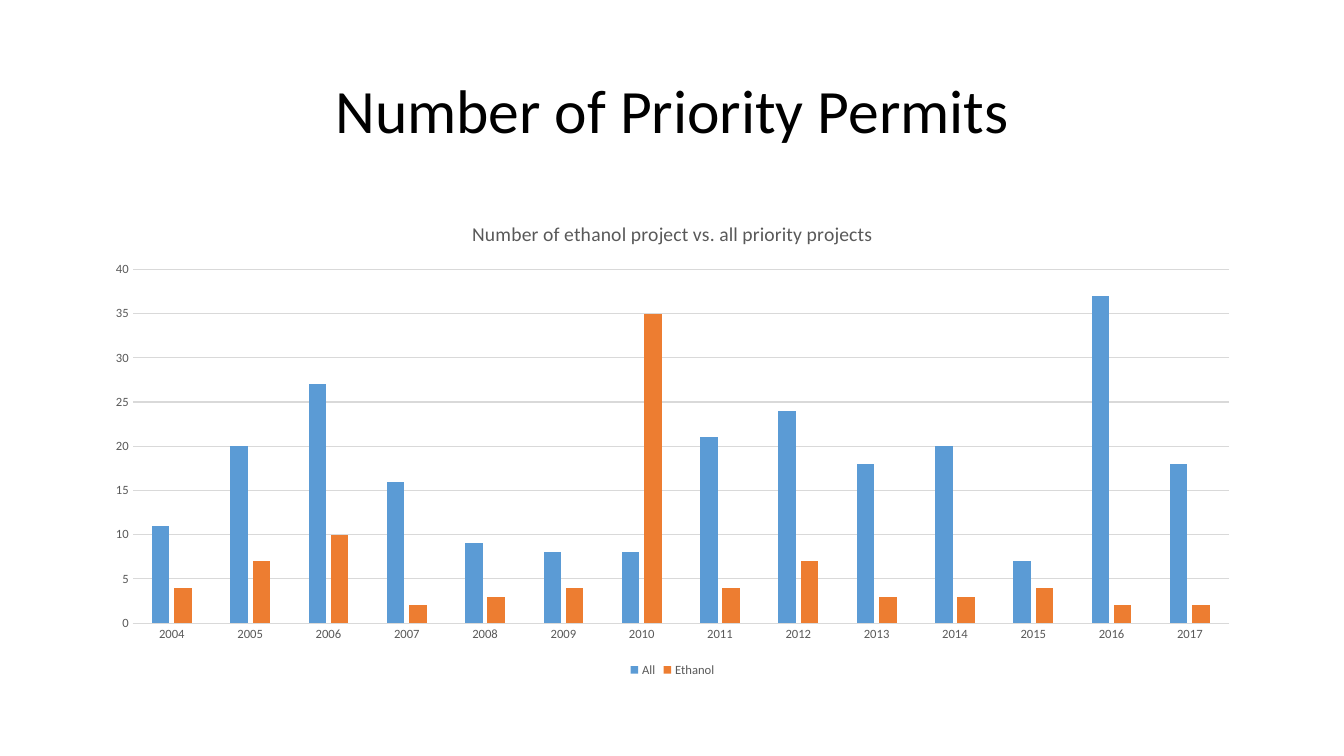
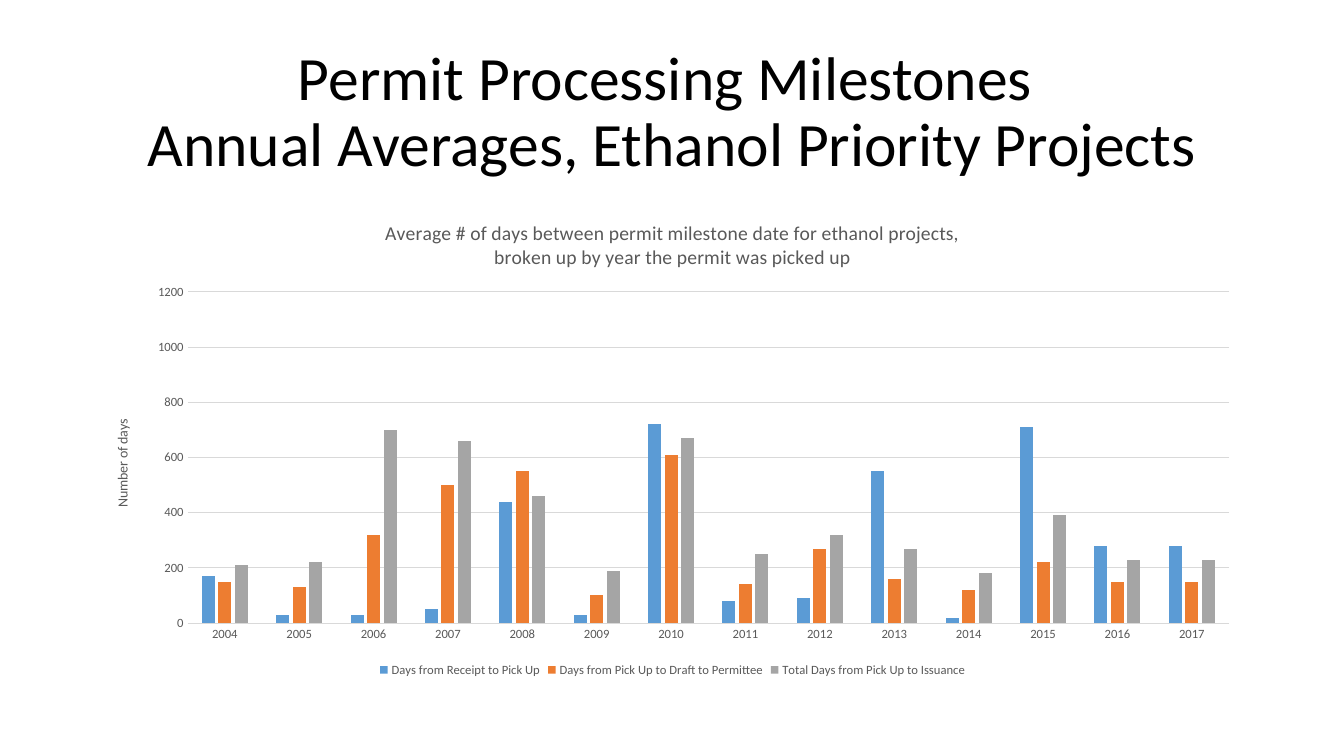
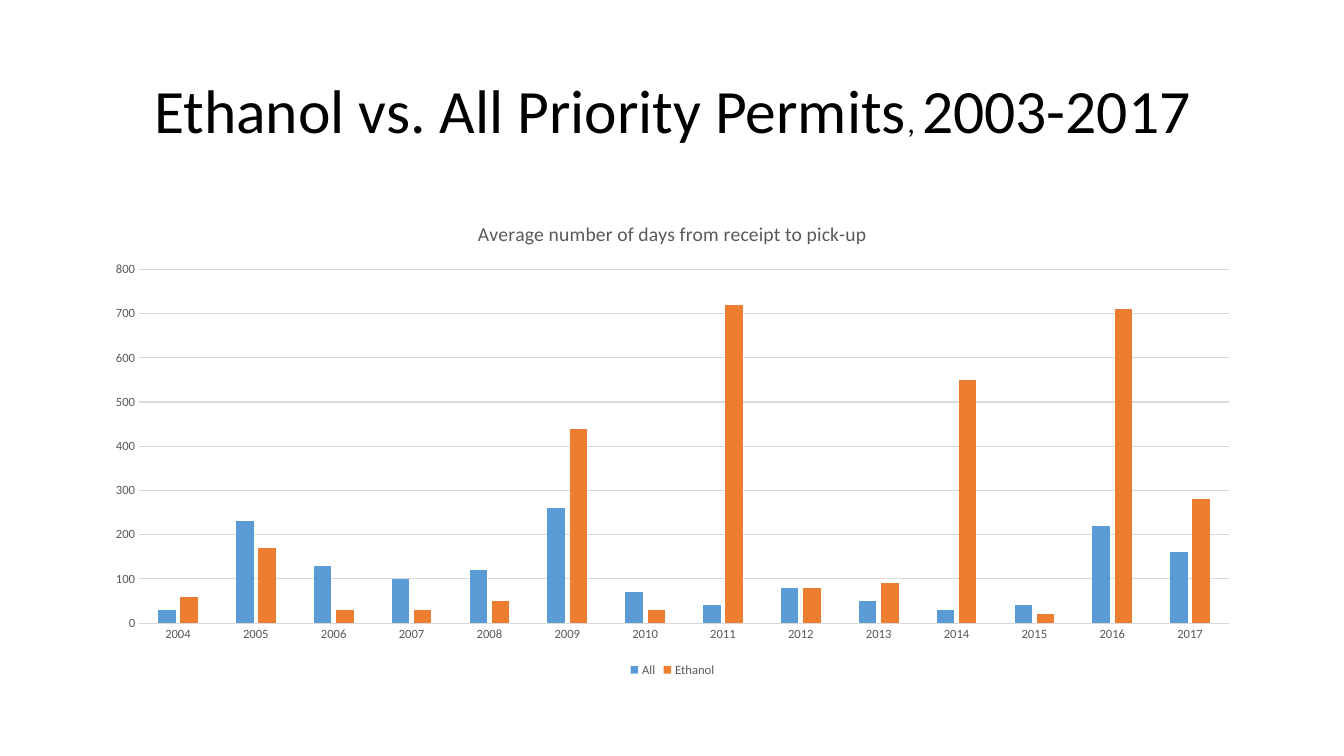
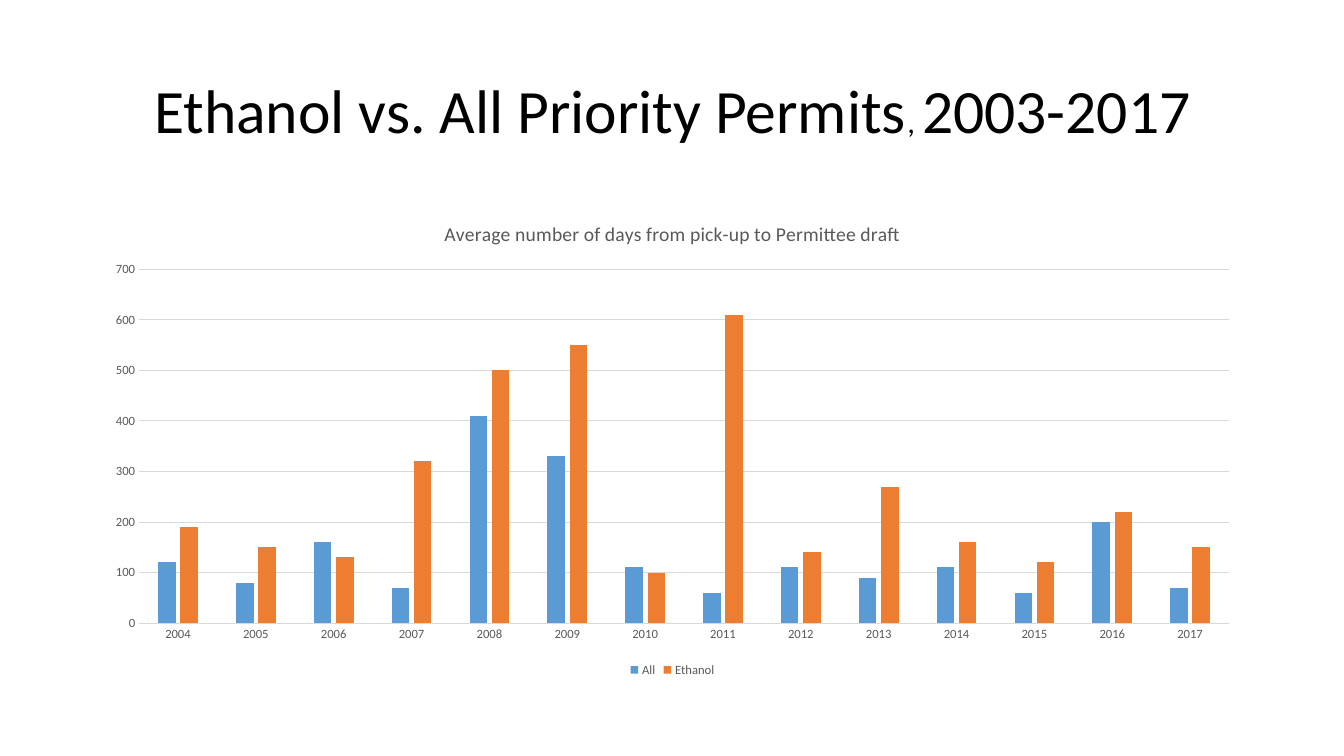
from dataclasses import dataclass

from pptx import Presentation
from pptx.chart.data import CategoryChartData
from pptx.dml.color import RGBColor
from pptx.enum.chart import XL_CHART_TYPE, XL_LEGEND_POSITION, XL_TICK_MARK
from pptx.enum.text import MSO_ANCHOR, MSO_AUTO_SIZE, PP_ALIGN
from pptx.util import Inches, Pt

CLUSTERED = XL_CHART_TYPE.COLUMN_CLUSTERED
LEGEND_BOTTOM = XL_LEGEND_POSITION.BOTTOM
NO_TICK = XL_TICK_MARK.NONE
MIDDLE = MSO_ANCHOR.MIDDLE
NO_AUTOFIT = MSO_AUTO_SIZE.NONE
CENTER = PP_ALIGN.CENTER
TITLE_ONLY = 5


@dataclass(frozen=True)
class Theme:
    font: str = "Calibri"
    black: RGBColor = RGBColor(0x00, 0x00, 0x00)
    gray: RGBColor = RGBColor(0x59, 0x59, 0x59)
    grid: RGBColor = RGBColor(0xD9, 0xD9, 0xD9)
    series: tuple = (
        RGBColor(0x5B, 0x9B, 0xD5),
        RGBColor(0xED, 0x7D, 0x31),
        RGBColor(0xA5, 0xA5, 0xA5),
    )
    title_size: int = 44
    comma_size: int = 22
    chart_title_size: int = 14
    axis_title_size: int = 10
    label_size: int = 9
    line_width: float = 0.75


THEME = Theme()
TITLE_BOX = (0.92, 0.4, 11.5, 1.45)
CHART_BOX = (0.92, 2, 11.5, 4.76)
YEARS = [str(year) for year in range(2004, 2018)]

COMPARISON_TITLE = [
    ("Ethanol vs. All Priority Permits", THEME.title_size),
    (", ", THEME.comma_size),
    ("2003-2017", THEME.title_size),
]

SLIDES = [
    {
        "title": [("Number of Priority Permits", THEME.title_size)],
        "chart_title": "Number of ethanol project vs. all priority projects",
        "series": {
            "All": [11, 20, 27, 16, 9, 8, 8, 21, 24, 18, 20, 7, 37, 18],
            "Ethanol": [4, 7, 10, 2, 3, 4, 35, 4, 7, 3, 3, 4, 2, 2],
        },
        "maximum": 40,
        "step": 5,
    },
    {
        "title": [
            ("Permit Processing Milestones \n", THEME.title_size),
            ("Annual Averages, Ethanol Priority Projects", THEME.title_size),
        ],
        "chart_title": "Average # of days between permit milestone date for ethanol projects,\n"
                       "broken up by year the permit was picked up",
        "series": {
            "Days from Receipt to Pick Up":
                [170, 30, 30, 50, 440, 30, 720, 80, 90, 550, 20, 710, 280, 280],
            "Days from Pick Up to Draft to Permittee":
                [150, 130, 320, 500, 550, 100, 610, 140, 270, 160, 120, 220, 150, 150],
            "Total Days from Pick Up to Issuance":
                [210, 220, 700, 660, 460, 190, 670, 250, 320, 270, 180, 390, 230, 230],
        },
        "maximum": 1200,
        "step": 200,
        "axis_title": "Number of days",
    },
    {
        "title": COMPARISON_TITLE,
        "chart_title": "Average number of days from receipt to pick-up",
        "series": {
            "All": [30, 230, 130, 100, 120, 260, 70, 40, 80, 50, 30, 40, 220, 160],
            "Ethanol": [60, 170, 30, 30, 50, 440, 30, 720, 80, 90, 550, 20, 710, 280],
        },
        "maximum": 800,
        "step": 100,
    },
    {
        "title": COMPARISON_TITLE,
        "chart_title": "Average number of days from pick-up to Permittee draft",
        "series": {
            "All": [120, 80, 160, 70, 410, 330, 110, 60, 110, 90, 110, 60, 200, 70],
            "Ethanol": [190, 150, 130, 320, 500, 550, 100, 610, 140, 270, 160, 120, 220, 150],
        },
        "maximum": 700,
        "step": 100,
    },
]


def style_font(font, size, color=THEME.gray):
    font.name = THEME.font
    font.size = Pt(size)
    font.bold = False
    font.color.rgb = color


def style_line(line):
    line.color.rgb = THEME.grid
    line.width = Pt(THEME.line_width)


def fill_title(page, spans, box):
    """Write (text, size) spans into the title; a final newline breaks the line."""
    title = page.shapes.title
    title.left, title.top, title.width, title.height = map(Inches, box)
    frame = title.text_frame
    frame.vertical_anchor = MIDDLE
    frame.auto_size = NO_AUTOFIT
    para = frame.paragraphs[0]
    para.alignment = CENTER
    para.line_spacing = 0.9
    style_font(para.font, THEME.title_size, THEME.black)
    for text, size in spans:
        span = para.add_run()
        span.text = text.rstrip("\n")
        span.font.size = Pt(size)
        if text.endswith("\n"):
            para.add_line_break()


def write_chart_text(holder, text, size):
    """Give a chart or an axis its title."""
    holder.has_title = True
    frame = getattr(holder, "chart_title", None) or holder.axis_title
    frame = frame.text_frame
    frame.text = text
    for para in frame.paragraphs:
        style_font(para.font, size)


def style_axes(chart, maximum, step):
    years, values = chart.category_axis, chart.value_axis
    for axis in (years, values):
        axis.major_tick_mark = axis.minor_tick_mark = NO_TICK
        style_font(axis.tick_labels.font, THEME.label_size)
    style_line(years.format.line)
    values.format.line.fill.background()
    values.has_major_gridlines = True
    style_line(values.major_gridlines.format.line)
    values.minimum_scale, values.maximum_scale = 0, maximum
    values.major_unit = step


def add_column_chart(page, content, box):
    data = CategoryChartData()
    data.categories = YEARS
    for name, numbers in content["series"].items():
        data.add_series(name, numbers)
    chart = page.shapes.add_chart(CLUSTERED, *map(Inches, box), data).chart
    style_font(chart.font, THEME.axis_title_size, THEME.black)

    write_chart_text(chart, content["chart_title"], THEME.chart_title_size)
    chart.chart_title.include_in_layout = False
    style_axes(chart, content["maximum"], content["step"])
    if "axis_title" in content:
        write_chart_text(chart.value_axis, content["axis_title"], THEME.axis_title_size)

    chart.has_legend = True
    chart.legend.position = LEGEND_BOTTOM
    chart.legend.include_in_layout = False
    style_font(chart.legend.font, THEME.label_size)

    plot = chart.plots[0]
    plot.gap_width, plot.overlap = 219, -27
    plot.vary_by_categories = False
    for series, color in zip(plot.series, THEME.series):
        series.format.fill.solid()
        series.format.fill.fore_color.rgb = color
        series.invert_if_negative = False


def main():
    deck = Presentation()
    deck.slide_width, deck.slide_height = Inches(13.33), Inches(7.5)
    for content in SLIDES:
        page = deck.slides.add_slide(deck.slide_layouts[TITLE_ONLY])
        fill_title(page, content["title"], TITLE_BOX)
        add_column_chart(page, content, CHART_BOX)
    deck.save("out.pptx")


if __name__ == "__main__":
    main()
